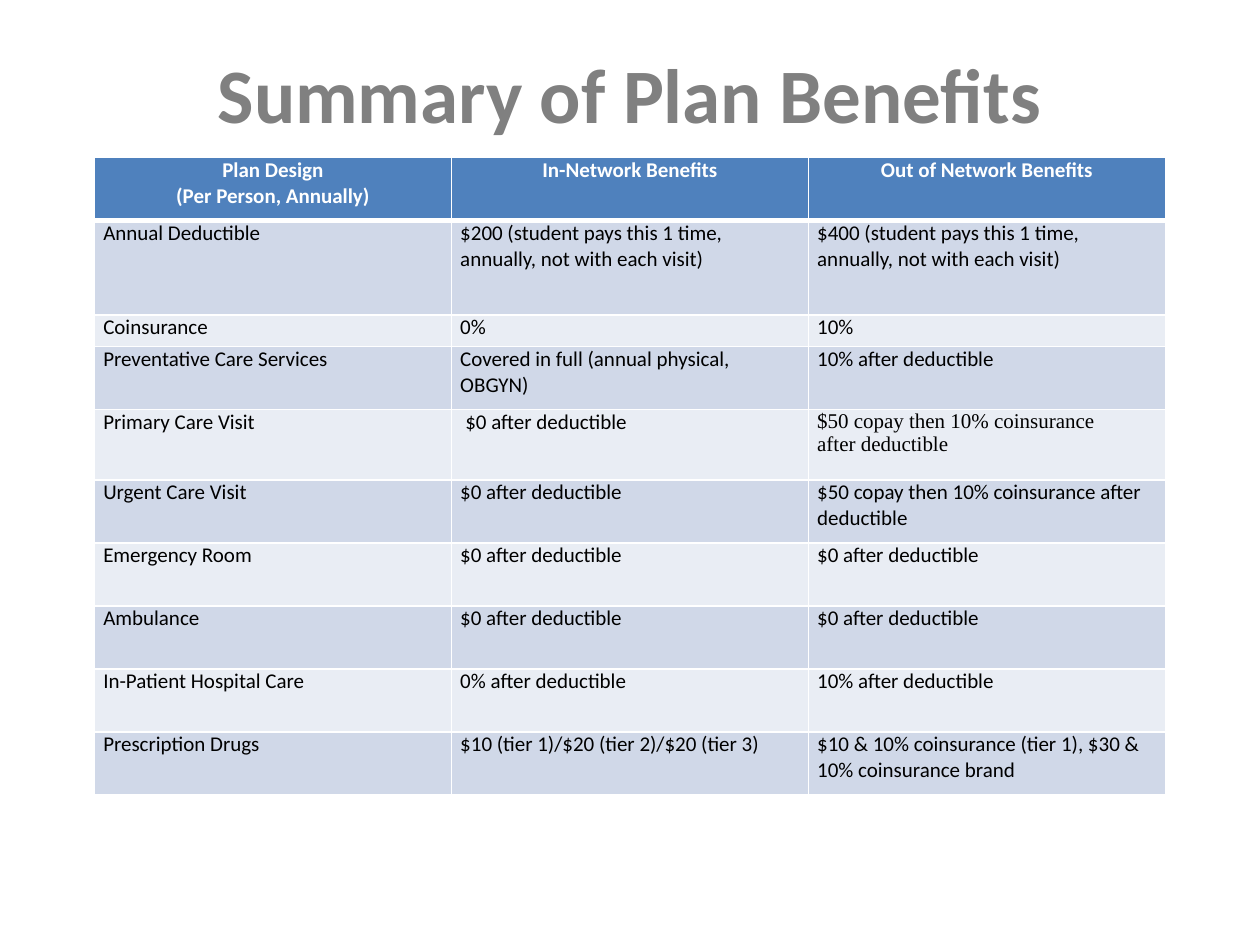
from lxml import etree
from pptx import Presentation
from pptx.dml.color import RGBColor
from pptx.enum.text import MSO_ANCHOR, PP_ALIGN
from pptx.oxml.ns import qn
from pptx.util import Inches, Pt

CENTER, LEFT = PP_ALIGN.CENTER, PP_ALIGN.LEFT
TOP, MIDDLE = MSO_ANCHOR.TOP, MSO_ANCHOR.MIDDLE
TITLE_ONLY = 5

COLORS = {
    "title": "808080",
    "header": "4F81BD",
    "header_text": "FFFFFF",
    "odd_row": "D0D8E8",
    "even_row": "E9EDF4",
    "body_text": "000000",
    "border": "FFFFFF",
}

FORMATS = {
    "title": {"name": "Calibri", "size": Pt(44), "bold": True},
    "header": {"name": "Calibri", "size": Pt(12), "bold": True},
    "body": {"name": "Calibri", "size": Pt(12), "bold": False},
    "serif": {"name": "Times New Roman", "size": Pt(12), "bold": False},
}

CELL_MARGINS = {
    "margin_left": Inches(0.07),
    "margin_right": Inches(0.07),
    "margin_top": 0,
    "margin_bottom": 0,
    "vertical_anchor": TOP,
}

AFTER = "$0 after deductible"
BENEFITS = [
    ("Plan Design\n(Per Person, Annually)", "In-Network Benefits",
     "Out of Network Benefits"),
    ("Annual Deductible",
     "$200 (student pays this 1 time, annually, not with each visit)",
     "$400 (student pays this 1 time, annually, not with each visit)"),
    ("Coinsurance", "0%", "10%"),
    ("Preventative Care Services", "Covered in full (annual physical, OBGYN)",
     "10% after deductible"),
    ("Primary Care Visit", AFTER,
     "$50 copay then 10% coinsurance\nafter deductible"),
    ("Urgent Care Visit", AFTER,
     "$50 copay then 10% coinsurance after deductible"),
    ("Emergency Room", AFTER, AFTER),
    ("Ambulance", AFTER, AFTER),
    ("In-Patient Hospital Care", "0% after deductible", "10% after deductible"),
    ("Prescription Drugs", "$10 (tier 1)/$20 (tier 2)/$20 (tier 3)",
     "$10 & 10% coinsurance (tier 1), $30 & 10% coinsurance brand"),
]
ROW_HEIGHT = 0.5
SPECIAL_HEIGHTS = {1: 0.75, 2: 0.25, 4: 0.56}
PRIMARY_IN_NETWORK = (4, 1)
PRIMARY_OUT_OF_NETWORK = (4, 2)


def set_attributes(target, values):
    for name, value in values.items():
        setattr(target, name, value)


def format_text(frame, style, color, alignment):
    for paragraph in frame.paragraphs:
        paragraph.alignment = alignment
        set_attributes(paragraph.font, FORMATS[style])
        paragraph.font.color.rgb = RGBColor.from_string(COLORS[color])


def add_borders(cell, bottom_width):
    """Draw the four cell borders; they must precede the fill in the XML."""
    properties = cell._tc.get_or_add_tcPr()
    widths = {"lnL": 1, "lnR": 1, "lnT": 1, "lnB": bottom_width}
    for side, width in widths.items():
        line = etree.SubElement(properties, qn(f"a:{side}"), w=str(Pt(width)))
        fill = etree.SubElement(line, qn("a:solidFill"))
        etree.SubElement(fill, qn("a:srgbClr"), val=COLORS["border"])


def place_title(slide, left, top, width, height):
    title = slide.shapes.title
    set_attributes(title, {"left": left, "top": top,
                           "width": width, "height": height})
    title.text_frame.text = "Summary of Plan Benefits"
    title.text_frame.vertical_anchor = MIDDLE
    format_text(title.text_frame, "title", "title", CENTER)


def fill_cell(cell, text, row, column):
    is_header = row == 0
    set_attributes(cell, CELL_MARGINS)
    if (row, column) == PRIMARY_IN_NETWORK:
        cell.margin_left = Inches(0.11)
    add_borders(cell, 3 if is_header else 1)
    band = "header" if is_header else "odd_row" if row % 2 else "even_row"
    cell.fill.solid()
    cell.fill.fore_color.rgb = RGBColor.from_string(COLORS[band])
    cell.text = text
    if is_header:
        format_text(cell.text_frame, "header", "header_text", CENTER)
    else:
        style = "serif" if (row, column) == PRIMARY_OUT_OF_NETWORK else "body"
        format_text(cell.text_frame, style, "body_text", LEFT)


def place_benefits(slide, left, top, width, height):
    column_count = len(BENEFITS[0])
    table = slide.shapes.add_table(len(BENEFITS), column_count,
                                   left, top, width, height).table
    for column in table.columns:
        column.width = width // column_count
    for row, texts in enumerate(BENEFITS):
        table.rows[row].height = Inches(SPECIAL_HEIGHTS.get(row, ROW_HEIGHT))
        for column, text in enumerate(texts):
            fill_cell(table.cell(row, column), text, row, column)


def main():
    presentation = Presentation()
    presentation.slide_width = Inches(10)
    presentation.slide_height = Inches(7.5)
    slide = presentation.slides.add_slide(presentation.slide_layouts[TITLE_ONLY])
    place_title(slide, Inches(0.5), Inches(0), Inches(9), Inches(1.47))
    place_benefits(slide, Inches(0.75), Inches(1.25), Inches(8.5), Inches(5.06))
    presentation.save("out.pptx")


if __name__ == "__main__":
    main()
